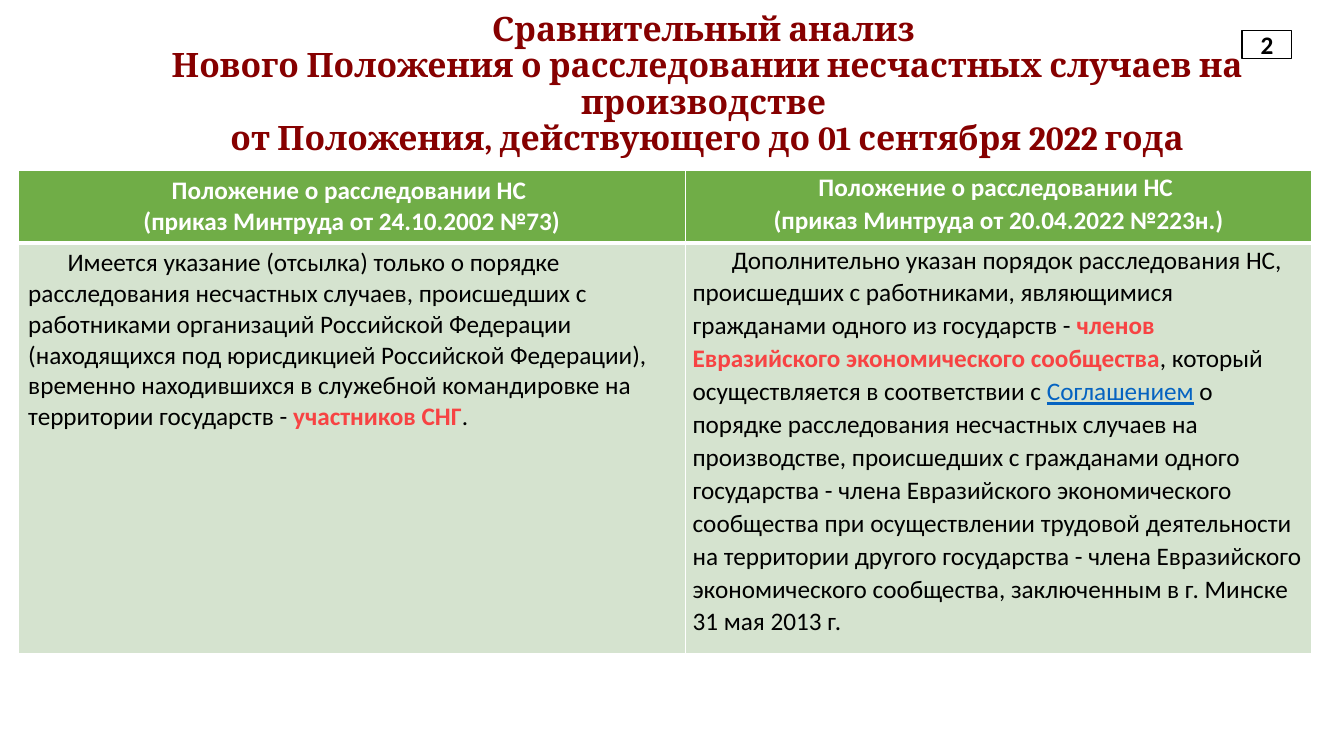
from dataclasses import dataclass

from lxml.etree import SubElement
from pptx import Presentation
from pptx.dml.color import RGBColor
from pptx.enum.shapes import MSO_SHAPE
from pptx.enum.text import MSO_ANCHOR as Anchor, PP_ALIGN as Align
from pptx.oxml.ns import qn
from pptx.table import _Cell as Cell
from pptx.text.text import TextFrame, _Paragraph as Paragraph
from pptx.util import Inches, Pt

COLORS = {
    "title": "860000",
    "header": "70AD47",
    "body": "D5E3CF",
    "accent": "F74343",
    "link": "0563C1",
    "black": "000000",
    "white": "FFFFFF",
}


@dataclass(frozen=True)
class Span:
    text: str
    color: str = "black"
    bold: bool = False
    underline: bool = False


@dataclass(frozen=True)
class CellText:
    paragraphs: list[list[Span]]
    fill: str
    align: Align = Align.LEFT
    indent: float = 0


@dataclass(frozen=True)
class Column:
    width: float
    spacing: float | None
    margins: tuple[float, float]  # horizontal, vertical
    cells: list[CellText]


def rgb(name: str) -> RGBColor:
    return RGBColor.from_string(COLORS[name])


def add_span(para: Paragraph, text: str, *, color: str = "black", bold: bool = False,
             underline: bool = False, size: float = 18, font: str = "Calibri") -> None:
    span = para.add_run()
    span.text = text
    span.font.name, span.font.size = font, Pt(size)
    span.font.bold, span.font.underline = bold, underline
    span.font.color.rgb = rgb(color)


def set_margins(target: TextFrame | Cell, horizontal: float, vertical: float) -> None:
    target.margin_left = target.margin_right = Inches(horizontal)
    target.margin_top = target.margin_bottom = Inches(vertical)


def set_borders(cell: Cell, **widths: float) -> None:
    properties = cell._tc.get_or_add_tcPr()
    for side in "LRTB":
        line = SubElement(properties, qn(f"a:ln{side}"), w=str(Pt(widths.get(side, 1))))
        fill = SubElement(line, qn("a:solidFill"))
        SubElement(fill, qn("a:srgbClr"), val=COLORS["white"])


def fill_cell(cell: Cell, content: CellText, column: Column) -> None:
    set_margins(cell, *column.margins)
    cell.fill.solid()
    cell.fill.fore_color.rgb = rgb(content.fill)
    frame = cell.text_frame
    for index, spans in enumerate(content.paragraphs):
        para = frame.add_paragraph() if index else frame.paragraphs[0]
        para.alignment = content.align
        if column.spacing:
            para.line_spacing = column.spacing
        if content.indent:
            para._p.get_or_add_pPr().set("indent", str(Inches(content.indent)))
        for span in spans:
            add_span(para, span.text, color=span.color, bold=span.bold,
                     underline=span.underline)


def header(order: str) -> CellText:
    lines = ["Положение о расследовании НС ", f"(приказ Минтруда от {order})"]
    return CellText([[Span(line, "white", True)] for line in lines], "header", Align.CENTER)


def body(*spans: Span) -> CellText:
    return CellText([list(spans)], "body", indent=0.39)


TITLE = [
    "Сравнительный анализ ",
    "Нового Положения о расследовании несчастных случаев на производстве ",
    "от Положения, действующего до 01 сентября 2022 года",
]
ROW_HEIGHTS = [0.72, 4.07]
COLUMNS = [
    Column(6.62, None, (0.1, 0.05), [
        header("24.10.2002 №73"),
        body(
            Span("Имеется указание (отсылка) только о порядке расследования несчастных "
                 "случаев, происшедших с работниками организаций Российской Федерации "
                 "(находящихся под юрисдикцией Российской Федерации), временно "
                 "находившихся в служебной командировке на территории государств - "),
            Span("участников СНГ", "accent", bold=True),
            Span("."),
        ),
    ]),
    Column(6.21, 1.07, (0.07, 0), [
        header("20.04.2022 №223н."),
        body(
            Span("Дополнительно указан порядок расследования НС, происшедших с "
                 "работниками, являющимися гражданами одного из государств - "),
            Span("членов Евразийского экономического сообщества", "accent", bold=True),
            Span(", который осуществляется в соответствии с "),
            Span("Соглашением", "link", underline=True),
            Span(" о порядке расследования несчастных случаев на производстве, "
                 "происшедших с гражданами одного государства - члена Евразийского "
                 "экономического сообщества при осуществлении трудовой деятельности на "
                 "территории другого государства - члена Евразийского экономического "
                 "сообщества, заключенным в г. Минске 31 мая 2013 г."),
        ),
    ]),
]

deck = Presentation()
deck.slide_width, deck.slide_height = Inches(13.33), Inches(7.5)
page = deck.slides.add_slide(deck.slide_layouts[6])

# Title
title = page.shapes.add_textbox(Inches(0.95), Inches(0.12), Inches(12.13), Inches(1.45))
title.text_frame.word_wrap = True
title.text_frame.vertical_anchor = Anchor.MIDDLE
title_para = title.text_frame.paragraphs[0]
title_para.alignment = Align.CENTER
title_para.line_spacing = 0.9
for number, line_text in enumerate(TITLE):
    if number:
        title_para.add_line_break()
    add_span(title_para, line_text, color="title", bold=True, size=24, font="Cambria")

# Comparison table
table = page.shapes.add_table(
    len(ROW_HEIGHTS), len(COLUMNS), Inches(0.18), Inches(1.69),
    Inches(sum(column.width for column in COLUMNS)), Inches(sum(ROW_HEIGHTS))).table
table.horz_banding = False
for row, height in zip(table.rows, ROW_HEIGHTS):
    row.height = Inches(height)
for column_index, column in enumerate(COLUMNS):
    table.columns[column_index].width = Inches(column.width)
    for row_index, content in enumerate(column.cells):
        cell = table.cell(row_index, column_index)
        set_borders(cell, **{"T" if row_index else "B": 3})
        fill_cell(cell, content, column)

# Page number
box = page.shapes.add_shape(
    MSO_SHAPE.RECTANGLE, Inches(12.32), Inches(0.3), Inches(0.49), Inches(0.28))
box.shadow.inherit = False
box.fill.solid()
box.fill.fore_color.rgb = rgb("white")
box.line.color.rgb = rgb("black")
box.line.width = Pt(1)
box.text_frame.vertical_anchor = Anchor.MIDDLE
number_para = box.text_frame.paragraphs[0]
number_para.alignment = Align.CENTER
add_span(number_para, "2", bold=True)

deck.save("out.pptx")
